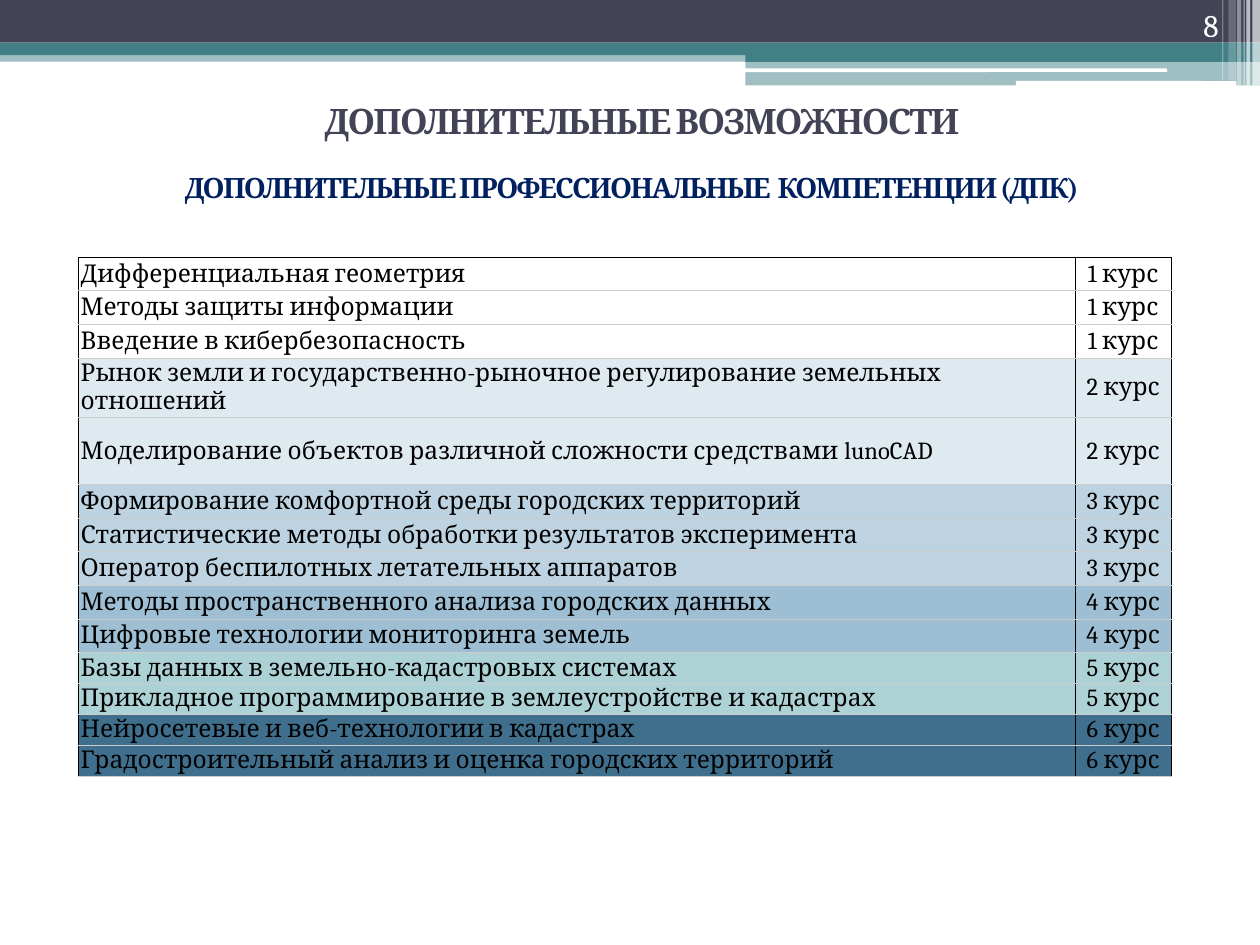
"""Build the slide listing additional professional competencies by year of study."""
from dataclasses import dataclass

from lxml import etree
from pptx import Presentation
from pptx.dml.color import RGBColor
from pptx.enum.shapes import MSO_SHAPE
from pptx.enum.text import MSO_ANCHOR, MSO_AUTO_SIZE, PP_ALIGN
from pptx.oxml.ns import qn
from pptx.util import Pt

RECTANGLE = MSO_SHAPE.RECTANGLE
ROUNDED = MSO_SHAPE.ROUNDED_RECTANGLE
MIDDLE, BOTTOM = MSO_ANCHOR.MIDDLE, MSO_ANCHOR.BOTTOM
LEFT, CENTER, RIGHT = PP_ALIGN.LEFT, PP_ALIGN.CENTER, PP_ALIGN.RIGHT
NO_AUTOFIT = MSO_AUTO_SIZE.NONE

WHITE = RGBColor(0xFF, 0xFF, 0xFF)
BLACK = RGBColor(0x00, 0x00, 0x00)
GRAY = RGBColor(0xCC, 0xCC, 0xCC)
SLATE = RGBColor(0x42, 0x44, 0x56)
TEAL = RGBColor(0x43, 0x80, 0x86)
NAVY = RGBColor(0x00, 0x20, 0x60)
YEAR_COLORS = {
    1: WHITE,
    2: RGBColor(0xDE, 0xE9, 0xF0),
    3: RGBColor(0xBE, 0xD3, 0xE1),
    4: RGBColor(0x9D, 0xBE, 0xD3),
    5: RGBColor(0xAD, 0xD2, 0xD6),
    6: RGBColor(0x40, 0x6F, 0x8D),
}
FONT = "Cambria"


@dataclass(frozen=True)
class Bar:
    left: float
    top: float
    width: float
    height: float
    color: RGBColor
    opacity: int = 100
    outline: int = RECTANGLE


@dataclass(frozen=True)
class Course:
    name: str
    year: int
    height: float = 19.2


@dataclass(frozen=True)
class TextStyle:
    size: float
    color: RGBColor
    alignment: int = LEFT
    bold: bool = False
    spacing: int = 0


BARS = [
    Bar(0, 28.8, 720, 6.5, TEAL, 50),
    Bar(0, 0, 720, 24.4, SLATE),
    Bar(0, 24.4, 720, 7.2, TEAL),
    Bar(426, 28.4, 294, 7, TEAL),
    Bar(426, 34.8, 294, 14, TEAL, 50),
    Bar(425.5, 39.1, 241.4, 2.1, WHITE, 100, ROUNDED),
    Bar(580.5, 46.3, 126, 2.8, WHITE, 100, ROUNDED),
    Bar(715.6, 0, 4.4, 48.8, WHITE, 65),
    Bar(712.2, 0, 2.2, 48.8, WHITE, 65),
    Bar(710.6, 0, 0.7, 48.8, WHITE, 60),
    Bar(707, 0, 2.2, 48.8, WHITE, 40),
    Bar(702, 0, 4.3, 46.1, WHITE, 20),
    Bar(698.4, 0, 0.7, 46.1, WHITE, 30),
]
COURSES = [
    Course("Дифференциальная геометрия", 1),
    Course("Методы защиты информации", 1),
    Course("Введение в кибербезопасность", 1),
    Course("Рынок земли и государственно-рыночное регулирование земельных отношений", 2, 34.2),
    Course("Моделирование объектов различной сложности средствами lunoCAD", 2, 38.2),
    Course("Формирование комфортной среды городских территорий", 3),
    Course("Статистические методы обработки результатов эксперимента", 3),
    Course("Оператор беспилотных летательных аппаратов", 3),
    Course("Методы пространственного анализа городских данных", 4),
    Course("Цифровые технологии мониторинга земель", 4),
    Course("Базы данных в земельно-кадастровых системах", 5, 17.7),
    Course("Прикладное программирование в землеустройстве и кадастрах", 5, 17.7),
    Course("Нейросетевые и веб-технологии в кадастрах", 6, 17.7),
    Course("Градостроительный анализ и оценка городских территорий", 6, 17.7),
]


def draw_bar(slide, bar: Bar) -> None:
    shape = slide.shapes.add_shape(
        bar.outline, Pt(bar.left), Pt(bar.top), Pt(bar.width), Pt(bar.height)
    )
    shape.shadow.inherit = False
    shape.line.fill.background()
    shape.fill.solid()
    shape.fill.fore_color.rgb = bar.color
    if bar.opacity < 100:
        color = shape.fill._xPr.find(qn("a:solidFill"))[0]
        etree.SubElement(color, qn("a:alpha"), val=str(bar.opacity * 1000))


def write_text(text_frame, text: str, style: TextStyle) -> None:
    paragraph = text_frame.paragraphs[0]
    paragraph.alignment = style.alignment
    paragraph.space_before = Pt(0)
    run = paragraph.add_run()
    run.text = text
    run.font.name = FONT
    run.font.size = Pt(style.size)
    run.font.bold = style.bold
    run.font.color.rgb = style.color
    if style.spacing:
        run.font._element.set("spc", str(style.spacing))


def fill_text_shape(shape, box: tuple, anchor: int, text: str, style: TextStyle) -> None:
    shape.left, shape.top, shape.width, shape.height = map(Pt, box)
    text_frame = shape.text_frame
    text_frame.word_wrap = True
    text_frame.auto_size = NO_AUTOFIT
    text_frame.vertical_anchor = anchor
    write_text(text_frame, text, style)


def set_borders(cell, top_color: RGBColor) -> None:
    properties = cell._tc.get_or_add_tcPr()
    colors = {"lnL": BLACK, "lnR": BLACK, "lnT": top_color, "lnB": GRAY}
    for side, color in colors.items():
        line = etree.SubElement(properties, qn(f"a:{side}"), w=str(Pt(0.6)))
        fill = etree.SubElement(line, qn("a:solidFill"))
        etree.SubElement(fill, qn("a:srgbClr"), val=str(color))


def draw_courses(slide, courses: list[Course]) -> None:
    widths = (569.8, 54.7)
    total_height = sum(course.height for course in courses)
    table = slide.shapes.add_table(
        len(courses), len(widths), Pt(44.7), Pt(147), Pt(sum(widths)), Pt(total_height)
    ).table
    table.first_row = False
    table.horz_banding = False
    for column, width in zip(table.columns, widths):
        column.width = Pt(width)
    for index, course in enumerate(courses):
        table.rows[index].height = Pt(course.height)
        contents = ((course.name, LEFT), (f"{course.year} курс", CENTER))
        for cell, (text, alignment) in zip(table.rows[index].cells, contents):
            cell.margin_left = cell.margin_right = Pt(1.4)
            cell.margin_top = cell.margin_bottom = Pt(0.7)
            cell.vertical_anchor = MIDDLE
            set_borders(cell, GRAY if index else BLACK)
            cell.fill.solid()
            cell.fill.fore_color.rgb = YEAR_COLORS[course.year]
            write_text(cell.text_frame, text, TextStyle(14, BLACK, alignment))


def main() -> None:
    presentation = Presentation()
    presentation.slide_width, presentation.slide_height = Pt(720), Pt(540)
    slide = presentation.slides.add_slide(presentation.slide_layouts[0])
    for bar in BARS:
        draw_bar(slide, bar)
    number_box = slide.shapes.add_textbox(0, 0, 0, 0)
    fill_text_shape(number_box, (643.7, 0, 59.8, 28.8), BOTTOM, "8", TextStyle(18, WHITE, RIGHT))
    fill_text_shape(
        slide.shapes.title, (33.8, 50.4, 666, 37.4), MIDDLE,
        "ДОПОЛНИТЕЛЬНЫЕ ВОЗМОЖНОСТИ", TextStyle(20, SLATE, CENTER, True, -100),
    )
    fill_text_shape(
        slide.placeholders[1], (28.1, 84.2, 666, 45.4), MIDDLE,
        "ДОПОЛНИТЕЛЬНЫЕ ПРОФЕССИОНАЛЬНЫЕ  КОМПЕТЕНЦИИ (ДПК)",
        TextStyle(16, NAVY, CENTER, True, -100),
    )
    draw_courses(slide, COURSES)
    presentation.save("out.pptx")


if __name__ == "__main__":
    main()
